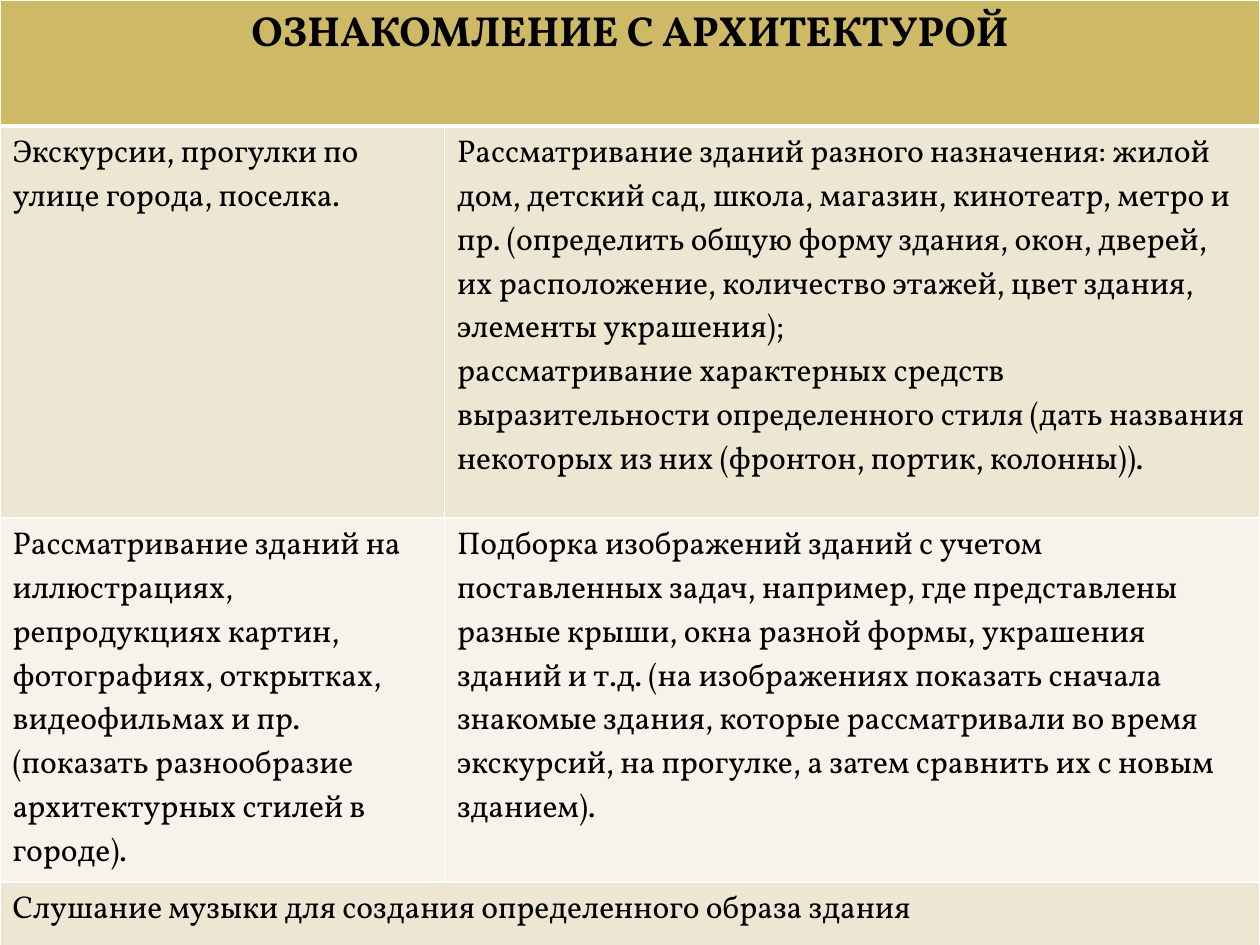
from pptx import Presentation
from pptx.dml.color import RGBColor
from pptx.enum.text import MSO_ANCHOR, PP_ALIGN
from pptx.oxml.ns import qn
from pptx.util import Pt
from lxml.etree import SubElement

COLORS = {
    "background": "000000",
    "text": "000000",
    "border": "FFFFFF",
    "header": "CEB966",
    "band": "EDE6D3",
    "light": "F6F3EA",
}
FONT = "Vollkorn"
COLUMN_WIDTHS = [254, 466]
ROW_HEIGHTS = [72, 224, 197, 47]
ROW_FILLS = ["header", "band", "light", "band"]

# One list per row; each cell is a list of paragraphs.
ROWS = [
    [["ОЗНАКОМЛЕНИЕ С АРХИТЕКТУРОЙ"]],
    [
        ["Экскурсии, прогулки по улице города, поселка."],
        [
            "Рассматривание зданий разного назначения: жилой дом, детский сад, "
            "школа, магазин, кинотеатр, метро и пр. (определить общую форму здания, "
            "окон, дверей, их расположение, количество этажей, цвет здания, "
            "элементы украшения);",
            "рассматривание характерных средств выразительности определенного стиля "
            "(дать названия некоторых из них (фронтон, портик, колонны)).",
        ],
    ],
    [
        [
            "Рассматривание зданий на иллюстрациях, репродукциях картин, "
            "фотографиях, открытках, видеофильмах и пр. (показать разнообразие "
            "архитектурных стилей в городе)."
        ],
        [
            "Подборка изображений зданий с учетом поставленных задач, например, где "
            "представлены разные крыши, окна разной формы, украшения зданий и т.д. "
            "(на изображениях показать сначала знакомые здания, которые "
            "рассматривали во время экскурсий, на прогулке, а затем сравнить их с "
            "новым зданием)."
        ],
    ],
    [["Слушание музыки для создания определенного образа здания"]],
]


def rgb(name):
    return RGBColor.from_string(COLORS[name])


def set_borders(cell, widths):
    """Draw the left, right, top and bottom borders; they must precede the fill."""
    properties = cell._tc.get_or_add_tcPr()
    for side, width in zip(("lnL", "lnR", "lnT", "lnB"), widths):
        line = SubElement(properties, qn(f"a:{side}"), w=str(Pt(width)))
        fill = SubElement(line, qn("a:solidFill"))
        SubElement(fill, qn("a:srgbClr"), val=COLORS["border"])


deck = Presentation()
deck.slide_width, deck.slide_height = Pt(720), Pt(540)
page = deck.slides.add_slide(deck.slide_layouts[6])
page.background.fill.solid()
page.background.fill.fore_color.rgb = rgb("background")

table = page.shapes.add_table(4, 2, 0, 0, Pt(720), Pt(540)).table
for column, width in zip(table.columns, COLUMN_WIDTHS):
    column.width = Pt(width)
for row, height in zip(table.rows, ROW_HEIGHTS):
    row.height = Pt(height)

for row_index, texts in enumerate(ROWS):
    is_header = row_index == 0
    if len(texts) == 1:
        table.cell(row_index, 0).merge(table.cell(row_index, 1))
    for cell in table.rows[row_index].cells:
        top = 3 if row_index == 1 else 1
        set_borders(cell, (1, 1, top, 3 if is_header else 1))
        cell.fill.solid()
        cell.fill.fore_color.rgb = rgb(ROW_FILLS[row_index])
    for column_index, lines in enumerate(texts):
        cell = table.cell(row_index, column_index)
        cell.vertical_anchor = MSO_ANCHOR.TOP
        cell.text = "\n".join(lines)
        for paragraph in cell.text_frame.paragraphs:
            paragraph.alignment = PP_ALIGN.CENTER if is_header else PP_ALIGN.LEFT
            paragraph.font.name = FONT
            paragraph.font.size = Pt(24 if is_header else 18)
            paragraph.font.bold = is_header
            paragraph.font.color.rgb = rgb("text")

deck.save("out.pptx")
